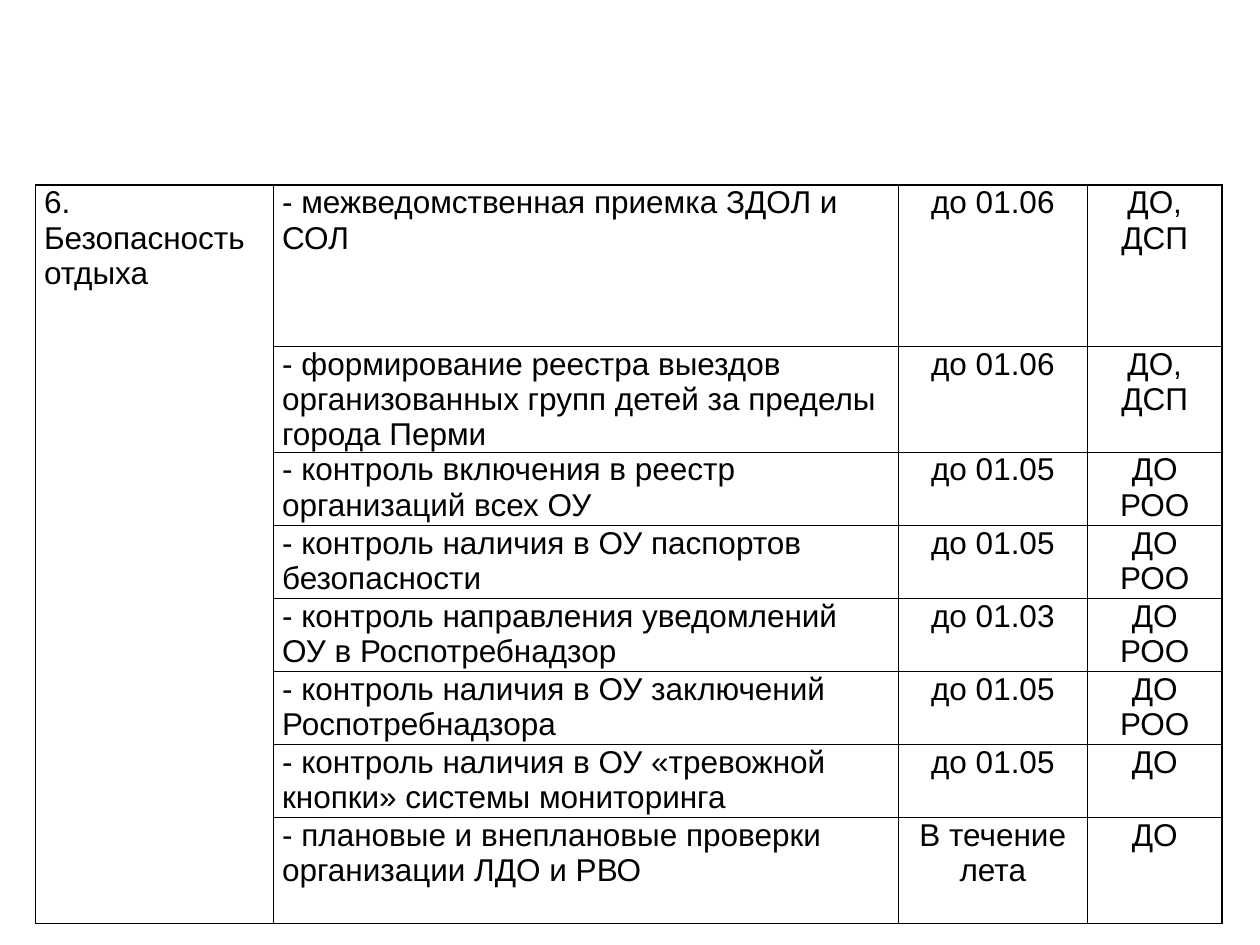
from typing import NamedTuple

from lxml.etree import SubElement
from pptx import Presentation
from pptx.dml.color import RGBColor
from pptx.enum.text import PP_ALIGN
from pptx.oxml.ns import qn
from pptx.table import _Cell
from pptx.util import Inches, Pt

BLACK = RGBColor(0x00, 0x00, 0x00)
COLUMN_WIDTHS = (1.89, 4.96, 1.5, 1.07)
FIRST_ROW_HEIGHT = 1.28
ROW_HEIGHT = 0.58
TABLE_HEIGHT = 5.78


class Task(NamedTuple):
    description: str
    deadline: str
    responsible: str


SECTION = "6. Безопасность отдыха"
TASKS = (
    Task("- межведомственная приемка ЗДОЛ и СОЛ", "до 01.06", "ДО, ДСП"),
    Task("- формирование реестра выездов организованных групп детей за пределы города Перми",
         "до 01.06", "ДО, ДСП"),
    Task("- контроль включения в реестр организаций всех ОУ", "до 01.05", "ДО\nРОО"),
    Task("- контроль наличия в ОУ паспортов безопасности", "до 01.05", "ДО\nРОО"),
    Task("- контроль направления уведомлений ОУ в Роспотребнадзор", "до 01.03", "ДО\nРОО"),
    Task("- контроль наличия в ОУ заключений Роспотребнадзора", "до 01.05", "ДО\nРОО"),
    Task("- контроль наличия в ОУ «тревожной кнопки» системы мониторинга", "до 01.05", "ДО"),
    Task("- плановые и внеплановые проверки организации ЛДО и РВО", "В течение лета", "ДО"),
)


def draw_borders(cell: _Cell) -> None:
    properties = cell._tc.get_or_add_tcPr()
    for index, side in enumerate(("lnL", "lnR", "lnT", "lnB")):
        line = properties.makeelement(qn(f"a:{side}"), {"w": str(Pt(1))})
        fill = SubElement(line, qn("a:solidFill"))
        SubElement(fill, qn("a:srgbClr"), val=str(BLACK))
        properties.insert(index, line)


def format_cell(cell: _Cell) -> None:
    cell.margin_left = cell.margin_right = Inches(0.07)
    cell.margin_top = cell.margin_bottom = 0
    cell.fill.background()
    draw_borders(cell)


def write_cell(cell: _Cell, text: str, alignment: PP_ALIGN) -> None:
    cell.text_frame.text = text
    for paragraph in cell.text_frame.paragraphs:
        paragraph.alignment = alignment
        for run in paragraph.runs:
            run.font.name = "Arial"
            run.font.size = Pt(18)
            run.font.color.rgb = BLACK


def main() -> None:
    presentation = Presentation()
    presentation.slide_width = Inches(10)
    presentation.slide_height = Inches(7.5)
    slide = presentation.slides.add_slide(presentation.slide_layouts[6])

    shape = slide.shapes.add_table(
        len(TASKS), len(COLUMN_WIDTHS), Inches(0.28), Inches(1.47),
        Inches(sum(COLUMN_WIDTHS)), Inches(TABLE_HEIGHT))
    table = shape.table
    table.first_row = table.horz_banding = False
    for column, width in zip(table.columns, COLUMN_WIDTHS):
        column.width = Inches(width)
    for index, row in enumerate(table.rows):
        row.height = Inches(ROW_HEIGHT if index else FIRST_ROW_HEIGHT)
    shape.height = Inches(TABLE_HEIGHT)

    for cell in table.iter_cells():
        format_cell(cell)
    table.cell(0, 0).merge(table.cell(len(TASKS) - 1, 0))
    write_cell(table.cell(0, 0), SECTION, PP_ALIGN.LEFT)

    alignments = (PP_ALIGN.LEFT, PP_ALIGN.CENTER, PP_ALIGN.CENTER)
    for row_index, task in enumerate(TASKS):
        for column_index, (text, alignment) in enumerate(zip(task, alignments), start=1):
            write_cell(table.cell(row_index, column_index), text, alignment)

    presentation.save("out.pptx")


if __name__ == "__main__":
    main()
